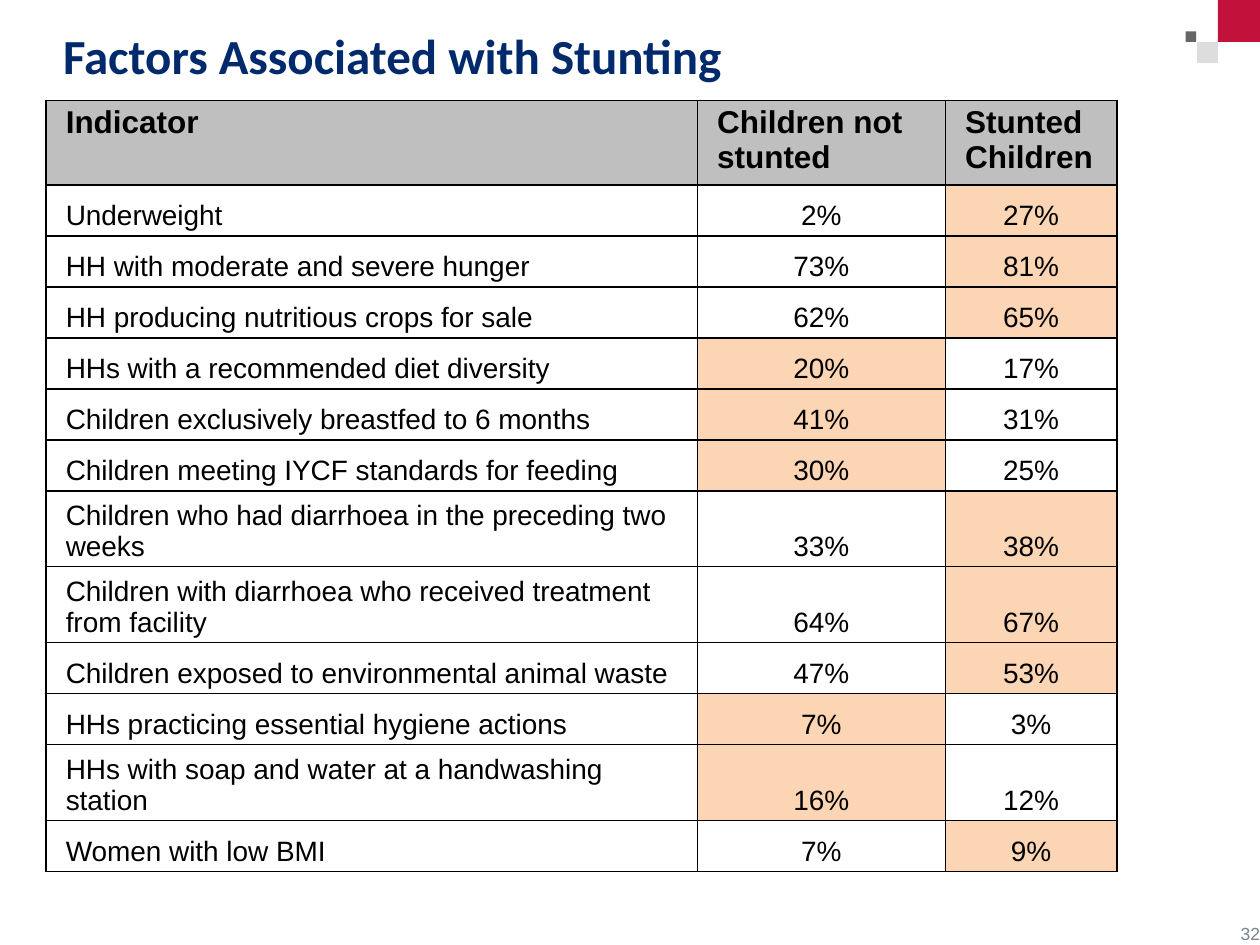
from typing import NamedTuple

from lxml.etree import SubElement
from pptx import Presentation
from pptx.dml.color import RGBColor
from pptx.enum.shapes import MSO_SHAPE
from pptx.enum.text import MSO_ANCHOR, PP_ALIGN
from pptx.oxml.ns import qn
from pptx.util import Pt

NAVY = RGBColor(0x00, 0x2A, 0x6C)
BLACK = RGBColor(0x00, 0x00, 0x00)
SLATE = RGBColor(0x76, 0x85, 0x91)
HEADER_GRAY = RGBColor(0xBF, 0xBF, 0xBF)
PEACH = RGBColor(0xFC, 0xD5, 0xB5)
DARK_GRAY = RGBColor(0x66, 0x66, 0x66)
LIGHT_GRAY = RGBColor(0xDD, 0xDD, 0xDD)
RED = RGBColor(0xC2, 0x11, 0x3A)

COLUMN_WIDTHS = (372.2, 141.8, 98)
HEADER_HEIGHT = 46
ROW_HEIGHT = 29.15
HEADINGS = ("Indicator", "Children not stunted", "Stunted Children")


class Square(NamedTuple):
    left: float
    top: float
    side: float
    color: RGBColor


class Indicator(NamedTuple):
    label: str
    not_stunted: int
    stunted: int


SQUARES = (
    Square(677.5, 18, 6, DARK_GRAY),
    Square(684, 24, 12, LIGHT_GRAY),
    Square(696, 0, 24, RED),
)

INDICATORS = (
    Indicator("Underweight", 2, 27),
    Indicator("HH with moderate and severe hunger", 73, 81),
    Indicator("HH producing nutritious crops for sale", 62, 65),
    Indicator("HHs with a recommended diet diversity", 20, 17),
    Indicator("Children exclusively breastfed to 6 months", 41, 31),
    Indicator("Children meeting IYCF standards for feeding", 30, 25),
    Indicator("Children who had diarrhoea in the preceding two weeks", 33, 38),
    Indicator("Children with diarrhoea who received treatment from facility", 64, 67),
    Indicator("Children exposed to environmental animal waste", 47, 53),
    Indicator("HHs practicing essential hygiene actions", 7, 3),
    Indicator("HHs with soap and water at a handwashing station", 16, 12),
    Indicator("Women with low BMI", 7, 9),
)


def write_text(text_frame, text: str, *, size: float, color: RGBColor = BLACK,
               font: str = "Arial", bold: bool = False,
               align: PP_ALIGN = PP_ALIGN.LEFT) -> None:
    text_frame.word_wrap = True
    paragraph = text_frame.paragraphs[0]
    paragraph.alignment = align
    run = paragraph.add_run()
    run.text = text
    run.font.name = font
    run.font.size = Pt(size)
    run.font.bold = bold
    run.font.color.rgb = color


def add_text_box(slide, left: float, top: float, width: float, height: float,
                 text: str, *, anchor: MSO_ANCHOR = MSO_ANCHOR.TOP, **text_format) -> None:
    box = slide.shapes.add_textbox(Pt(left), Pt(top), Pt(width), Pt(height))
    frame = box.text_frame
    frame.margin_left = frame.margin_right = Pt(0)
    frame.margin_top = frame.margin_bottom = Pt(0)
    frame.vertical_anchor = anchor
    write_text(frame, text, **text_format)


def add_square(slide, square: Square) -> None:
    shape = slide.shapes.add_shape(MSO_SHAPE.RECTANGLE, Pt(square.left), Pt(square.top),
                                   Pt(square.side), Pt(square.side))
    shape.shadow.inherit = False
    shape.fill.solid()
    shape.fill.fore_color.rgb = square.color
    shape.line.fill.background()


def set_borders(cell, widths: dict[str, float]) -> None:
    properties = cell._tc.get_or_add_tcPr()
    for edge, width in widths.items():
        line = SubElement(properties, qn(f"a:{edge}"), w=str(Pt(width)))
        fill = SubElement(line, qn("a:solidFill"))
        SubElement(fill, qn("a:srgbClr"), val=str(BLACK))


def fill_cell(cell, text: str, color: RGBColor | None, borders: dict[str, float],
              anchor: MSO_ANCHOR, **text_format) -> None:
    cell.margin_left = cell.margin_right = Pt(11.4)
    cell.margin_top = cell.margin_bottom = Pt(2.5)
    cell.vertical_anchor = anchor
    write_text(cell.text_frame, text, **text_format)
    set_borders(cell, borders)
    if color is None:
        cell.fill.background()
    else:
        cell.fill.solid()
        cell.fill.fore_color.rgb = color


def add_indicator_table(slide) -> None:
    table_height = HEADER_HEIGHT + ROW_HEIGHT * len(INDICATORS)
    table = slide.shapes.add_table(len(INDICATORS) + 1, len(HEADINGS), Pt(26.2), Pt(57.4),
                                   Pt(sum(COLUMN_WIDTHS)), Pt(table_height)).table
    table.first_row = False
    table.horz_banding = False
    for column, width in zip(table.columns, COLUMN_WIDTHS):
        column.width = Pt(width)
    for index, row in enumerate(table.rows):
        row.height = Pt(ROW_HEIGHT if index else HEADER_HEIGHT)

    last = len(HEADINGS) - 1
    borders = [
        {"lnL": 0.5 if column else 1, "lnR": 0.5 if column < last else 1, "lnT": 1, "lnB": 1}
        for column in range(len(HEADINGS))
    ]
    for column, heading in enumerate(HEADINGS):
        fill_cell(table.cell(0, column), heading, HEADER_GRAY, borders[column],
                  MSO_ANCHOR.TOP, size=18, bold=True)
    for row, indicator in enumerate(INDICATORS, start=1):
        fill_cell(table.cell(row, 0), indicator.label, None, borders[0],
                  MSO_ANCHOR.BOTTOM, size=16)
        values = (indicator.not_stunted, indicator.stunted)
        for column, value in enumerate(values, start=1):
            fill_cell(table.cell(row, column), f"{value}%",
                      PEACH if value == max(values) else None, borders[column],
                      MSO_ANCHOR.BOTTOM, size=16, align=PP_ALIGN.CENTER)


def main() -> None:
    presentation = Presentation()
    presentation.slide_width = Pt(720)
    presentation.slide_height = Pt(540)
    slide = presentation.slides.add_slide(presentation.slide_layouts[6])
    for square in SQUARES:
        add_square(slide, square)
    add_text_box(slide, 696, 518, 24, 21.6, "32", anchor=MSO_ANCHOR.BOTTOM,
                 size=10, color=SLATE, align=PP_ALIGN.RIGHT)
    add_text_box(slide, 36, 14.4, 641.5, 56, "Factors Associated with Stunting",
                 size=28, color=NAVY, font="Calibri", bold=True)
    add_indicator_table(slide)
    presentation.save("out.pptx")


if __name__ == "__main__":
    main()
